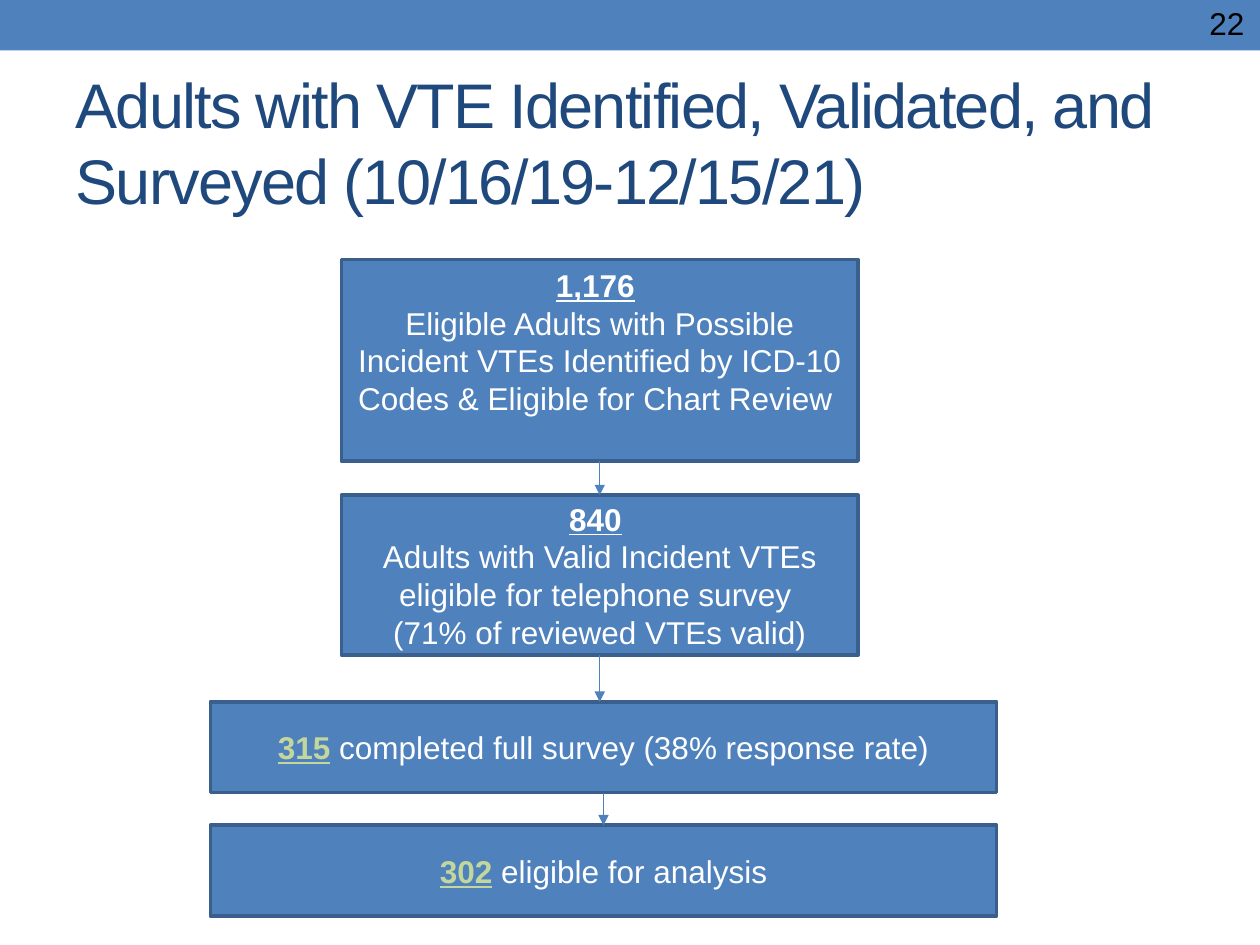
"""Build a slide with a flow chart of adults identified, validated and surveyed."""
from dataclasses import dataclass
from itertools import pairwise

from pptx import Presentation
from pptx.dml.color import RGBColor as RGB
from pptx.enum.shapes import MSO_CONNECTOR as LINK, MSO_SHAPE as SHAPE
from pptx.enum.text import MSO_ANCHOR as ANCHOR, MSO_AUTO_SIZE as FIT, PP_ALIGN as ALIGN
from pptx.oxml.ns import qn
from pptx.util import Inches, Pt
from lxml.etree import SubElement as Sub


@dataclass(frozen=True)
class Theme:
    font: str = "Arial"
    head: int = 36
    body: int = 18
    blue: RGB = RGB(0x4F, 0x81, 0xBD)
    edge: RGB = RGB(0x3A, 0x5F, 0x8C)
    navy: RGB = RGB(0x1F, 0x49, 0x7D)
    green: RGB = RGB(0xC3, 0xD6, 0x9B)
    white: RGB = RGB(0xFF, 0xFF, 0xFF)
    black: RGB = RGB(0, 0, 0)


THEME = Theme()
NARROW = (2.71, 4.1)
WIDE = (1.67, 6.24)
STEPS = [
    (NARROW, 2.06, 1.6, THEME.white, 0.35, [
        ("1,176", " "),
        ("", "Eligible Adults with Possible Incident VTEs Identified by ICD-10 "
             "Codes & Eligible for Chart Review "),
    ]),
    (NARROW, 3.93, 1.27, THEME.white, 0.05, [
        ("840", " "),
        ("", "Adults with Valid Incident VTEs eligible for telephone survey "),
        ("", "(71% of reviewed VTEs valid)"),
    ]),
    (WIDE, 5.57, 0.72, THEME.green, 0.05,
     [("315", " completed full survey (38% response rate)")]),
    (WIDE, 6.55, 0.72, THEME.green, 0.05, [("302", " eligible for analysis")]),
]


def style(run, size, color, bold=False):
    font = run.font
    font.name, font.size, font.bold = THEME.font, Pt(size), bold
    font.underline = bold
    font.color.rgb = color


def add_rect(slide, left, top, width, height):
    rect = slide.shapes.add_shape(
        SHAPE.RECTANGLE, Inches(left), Inches(top), Inches(width), Inches(height))
    rect.shadow.inherit = False
    rect.fill.solid()
    rect.fill.fore_color.rgb = THEME.blue
    rect.line.fill.background()
    return rect


def set_title(slide, text):
    title = slide.shapes.title
    title.left, title.top = Inches(0.5), Inches(0.58)
    title.width, title.height = Inches(9), Inches(1.08)
    frame = title.text_frame
    frame.text = text
    frame.auto_size, frame.vertical_anchor = FIT.NONE, ANCHOR.MIDDLE
    para = frame.paragraphs[0]
    para.alignment = ALIGN.LEFT
    run = para.runs[0]
    style(run, THEME.head, THEME.navy)
    run.font._element.set("spc", "-100")


def add_step(slide, span, top, height, accent, inset, lines):
    left, width = span
    box = add_rect(slide, left, top, width, height)
    box.line.color.rgb = THEME.edge
    box.line.width = Pt(2.08)
    frame = box.text_frame
    frame.word_wrap, frame.vertical_anchor = True, ANCHOR.MIDDLE
    frame.margin_bottom = Inches(inset)
    for index, (count, label) in enumerate(lines):
        para = frame.add_paragraph() if index else frame.paragraphs[0]
        para.alignment = ALIGN.CENTER
        for text, color, bold in ((count, accent, True), (label, THEME.white, False)):
            if text:
                run = para.add_run()
                run.text = text
                style(run, THEME.body, color, bold)
    return box


def add_arrow(slide, upper, lower):
    center = upper.left + upper.width // 2
    arrow = slide.shapes.add_connector(
        LINK.STRAIGHT, center, upper.top + upper.height, center, lower.top)
    arrow.line.color.rgb = THEME.blue
    arrow.line.width = Pt(0.75)
    Sub(arrow.line._get_or_add_ln(), qn("a:tailEnd"), type="triangle")
    Sub(arrow._element.spPr, qn("a:effectLst"))


def add_number(slide, text):
    box = slide.shapes.add_textbox(Inches(9.5), Inches(-0.02), Inches(0.49), Inches(0.4))
    frame = box.text_frame
    frame.text = text
    frame.word_wrap = True
    style(frame.paragraphs[0].runs[0], THEME.body, THEME.black)


def main():
    deck = Presentation()
    deck.slide_width, deck.slide_height = Inches(10), Inches(7.5)
    slide = deck.slides.add_slide(deck.slide_layouts[5])
    add_rect(slide, 0, 0, 10, 0.4)
    set_title(slide, "Adults with VTE Identified, Validated, and Surveyed (10/16/19-12/15/21)")
    boxes = [add_step(slide, *step) for step in STEPS]
    for upper, lower in pairwise(boxes):
        add_arrow(slide, upper, lower)
    add_number(slide, "22")
    deck.save("out.pptx")


if __name__ == "__main__":
    main()
